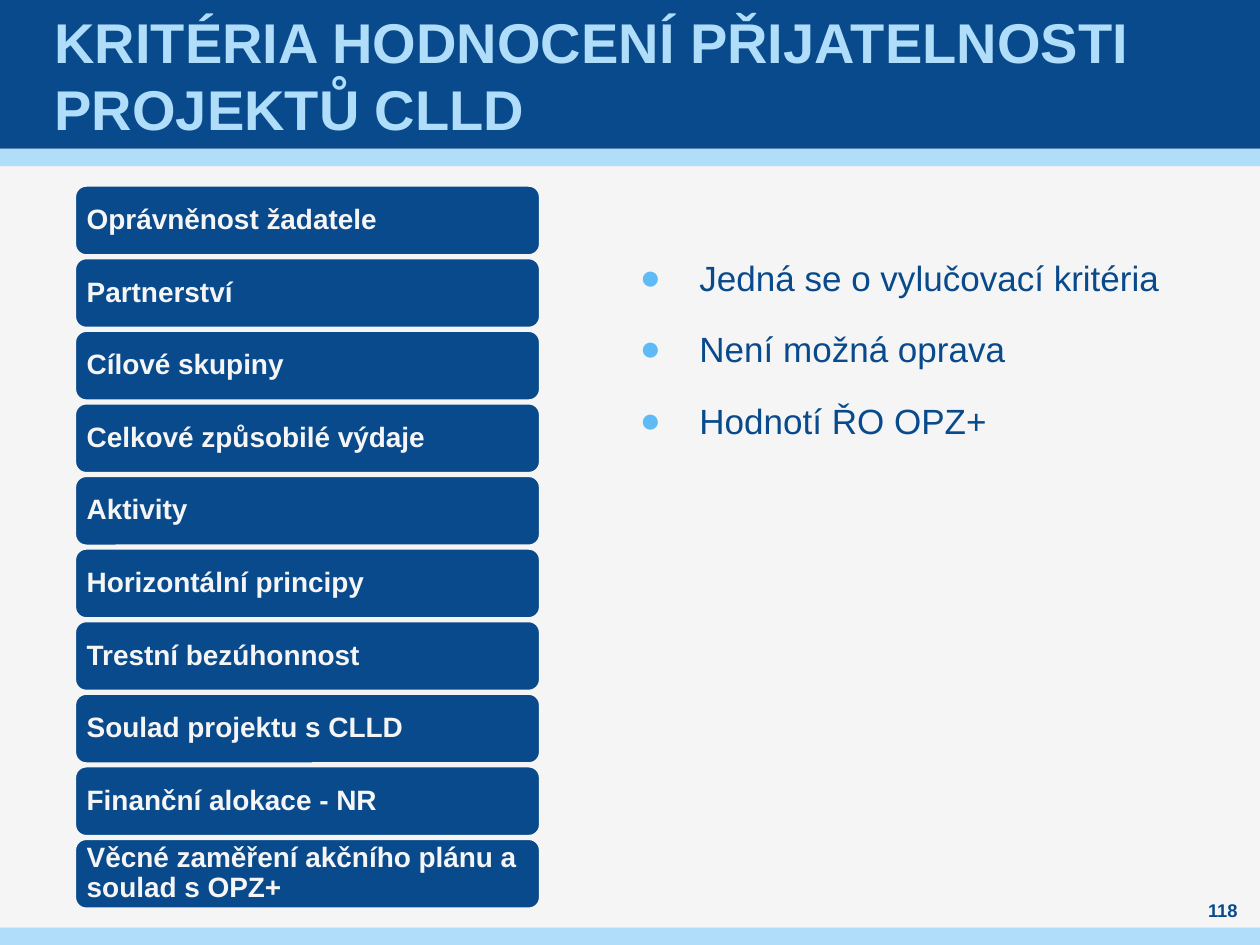
from dataclasses import dataclass

from lxml.etree import SubElement
from pptx import Presentation
from pptx.dml.color import RGBColor as RGB
from pptx.enum.shapes import MSO_SHAPE as SHAPE
from pptx.enum.text import MSO_ANCHOR as ANCHOR, PP_ALIGN as ALIGN
from pptx.oxml.ns import qn
from pptx.util import Cm, Pt


@dataclass(frozen=True)
class Theme:
    font: str = "Arial"
    navy: str = "084A8B"
    sky: str = "AFDDFA"
    bullet: str = "5FBBF5"
    paper: str = "F5F5F5"
    title: float = 32
    body: float = 20
    label: float = 16
    number: float = 10.5


T = Theme()

CRITERIA = [
    "Oprávněnost žadatele",
    "Partnerství",
    "Cílové skupiny",
    "Celkové způsobilé výdaje",
    "Aktivity",
    "Horizontální principy",
    "Trestní bezúhonnost",
    "Soulad projektu s CLLD",
    "Finanční alokace - NR",
    "Věcné zaměření akčního plánu a soulad s OPZ+",
]
NOTES = ["Jedná se o vylučovací kritéria", "Není možná oprava", "Hodnotí ŘO OPZ+"]


def add_run(p, text, size, color, bold=False):
    r = p.add_run()
    r.text = text
    r.font.name = T.font
    r.font.size = Pt(size)
    r.font.bold = bold
    r.font.color.rgb = RGB.from_string(color)


def set_frame(sp, anchor, x_inset=0, y_inset=0):
    tf = sp.text_frame
    tf.word_wrap = True
    tf.vertical_anchor = anchor
    tf.margin_left = tf.margin_right = Cm(x_inset)
    tf.margin_top = tf.margin_bottom = Cm(y_inset)
    return tf


def add_box(s, kind, x, y, w, h, fill):
    sp = s.shapes.add_shape(kind, Cm(x), Cm(y), Cm(w), Cm(h))
    sp.shadow.inherit = False
    sp.fill.solid()
    sp.fill.fore_color.rgb = RGB.from_string(fill)
    sp.line.fill.background()
    return sp


def add_text(s, x, y, w, h, anchor, x_inset=0):
    sp = s.shapes.add_textbox(Cm(x), Cm(y), Cm(w), Cm(h))
    return set_frame(sp, anchor, x_inset)


def add_criterion(s, y, text):
    sp = add_box(s, SHAPE.ROUNDED_RECTANGLE, 1.5, y, 9.4, 1.43, T.navy)
    sp.line.color.rgb = RGB.from_string(T.paper)
    sp.line.width = Pt(2)
    p = set_frame(sp, ANCHOR.MIDDLE, 0.18, 0.18).paragraphs[0]
    p.alignment = ALIGN.LEFT
    p.line_spacing = 0.9
    add_run(p, text, T.label, T.paper, True)


def add_bullet(p, text):
    p.line_spacing = Pt(28.8)
    p.space_before = p.space_after = Pt(6)
    pPr = p._p.get_or_add_pPr()
    pPr.set("marL", str(Cm(1.2)))
    pPr.set("indent", str(-Cm(1.2)))
    color = SubElement(pPr, qn("a:buClr"))
    SubElement(color, qn("a:srgbClr"), val=T.bullet)
    SubElement(pPr, qn("a:buFont"), typeface=T.font)
    SubElement(pPr, qn("a:buChar"), char="●")
    add_run(p, text, T.body, T.navy)


def add_bullets(s, x, y, w, h, items):
    tf = add_text(s, x, y, w, h, ANCHOR.TOP)
    for i, text in enumerate(items):
        add_bullet(tf.add_paragraph() if i else tf.paragraphs[0], text)


def main():
    prs = Presentation()
    prs.slide_width, prs.slide_height = Cm(25.4), Cm(19.05)
    s = prs.slides.add_slide(prs.slide_layouts[6])
    s.background.fill.solid()
    s.background.fill.fore_color.rgb = RGB.from_string(T.paper)

    for y, h, fill in [(3, 0.35, T.sky), (0, 3, T.navy), (18.7, 0.35, T.sky)]:
        add_box(s, SHAPE.RECTANGLE, 0, y, 25.4, h, fill)

    tf = add_text(s, 1, 0, 23.4, 3, ANCHOR.MIDDLE, 0.1)
    add_run(tf.paragraphs[0], "KRITÉRIA HODNOCENÍ PŘIJATELNOSTI PROJEKTŮ CLLD",
            T.title, T.sky, True)

    add_bullets(s, 12.9, 5, 11, 12, NOTES)

    p = add_text(s, 24, 18.1, 1.3, 0.5, ANCHOR.MIDDLE).paragraphs[0]
    p.alignment = ALIGN.CENTER
    add_run(p, "118", T.number, T.navy, True)

    top, last = 3.73, 16.9
    pitch = (last - top) / (len(CRITERIA) - 1)
    for i, text in enumerate(CRITERIA):
        add_criterion(s, top + i * pitch, text)

    prs.save("out.pptx")


if __name__ == "__main__":
    main()
